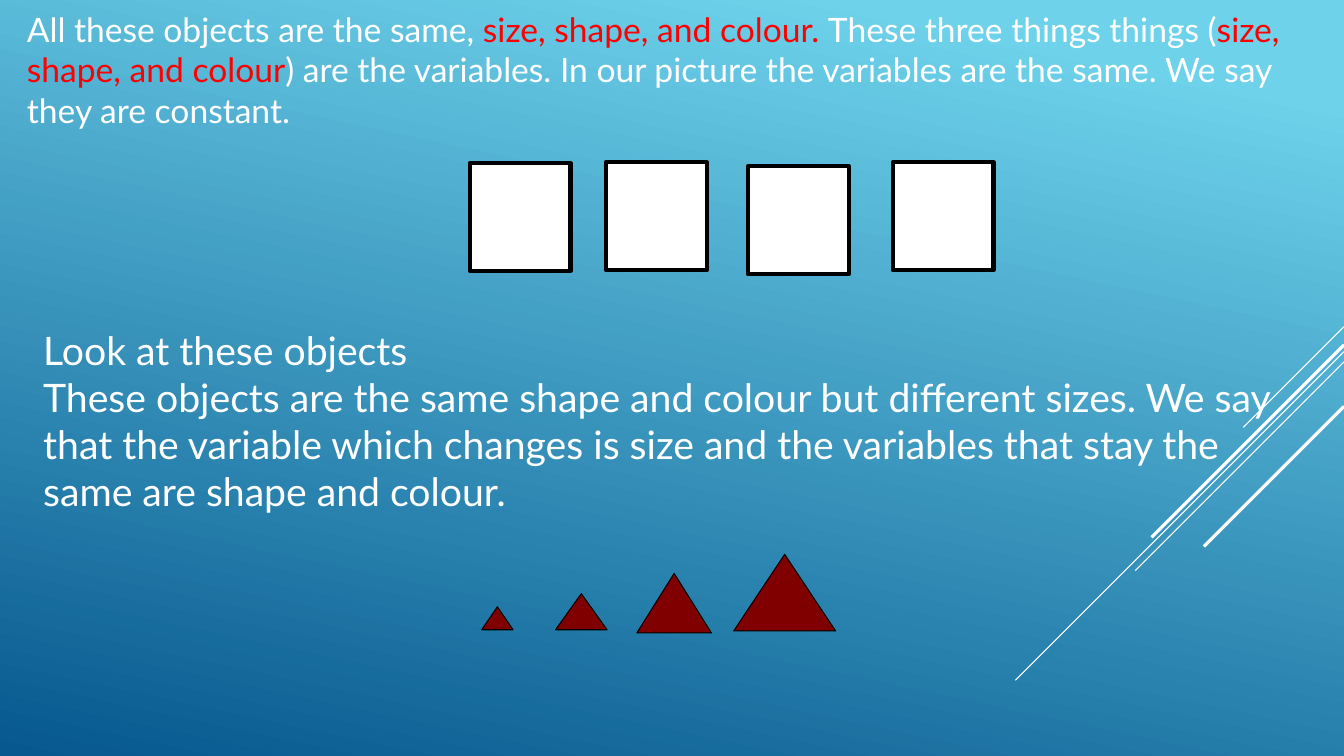
from dataclasses import dataclass

from lxml.etree import SubElement
from pptx import Presentation
from pptx.dml.color import RGBColor
from pptx.enum.shapes import MSO_CONNECTOR as Connector, MSO_SHAPE as Shape
from pptx.enum.text import MSO_ANCHOR as Anchor
from pptx.oxml.ns import qn
from pptx.util import Cm, Pt


@dataclass(frozen=True)
class Theme:
    font: str = "Lato"
    white: str = "FFFFFF"
    black: str = "000000"
    highlight: str = "FF0000"
    maroon: str = "800000"
    sky: str = "6ED2EB"
    deep_blue: str = "06588E"
    intro_size: int = 24
    body_size: int = 28
    thin: float = 0.75
    medium: float = 2.25
    thick: float = 3


THEME = Theme()
PAGE_WIDTH, PAGE_HEIGHT = 33.87, 19.05


def color(value):
    return RGBColor.from_string(value)


def paint_background(page):
    fill = page.background.fill
    fill.gradient()
    fill.gradient_angle = 258  # counter-clockwise
    stops = ((0.1, THEME.sky), (1, THEME.deep_blue))
    for stop, (position, value) in zip(fill.gradient_stops, stops):
        stop.position = position
        stop.color.rgb = color(value)


def add_diagonal(page, top, run, weight):
    """Draw a 45 degree line down and left from the right edge."""
    line = page.shapes.add_connector(
        Connector.STRAIGHT, Cm(PAGE_WIDTH), Cm(top),
        Cm(PAGE_WIDTH - run), Cm(top + run))
    line.line.color.rgb = color(THEME.white)
    line.line.width = Pt(weight)
    SubElement(line._element.spPr, qn("a:effectLst"))


def add_figure(page, kind, left, top, width, height, *, fill, weight):
    figure = page.shapes.add_shape(kind, Cm(left), Cm(top), Cm(width), Cm(height))
    figure.shadow.inherit = False
    figure.fill.solid()
    figure.fill.fore_color.rgb = color(fill)
    figure.line.color.rgb = color(THEME.black)
    figure.line.width = Pt(weight)


def add_text(page, paragraphs, *, left, top, width, height, size):
    """Each paragraph is a list of (text, colour) spans."""
    box = page.shapes.add_textbox(Cm(left), Cm(top), Cm(width), Cm(height))
    frame = box.text_frame
    frame.word_wrap = True
    frame.vertical_anchor = Anchor.TOP
    for index, spans in enumerate(paragraphs):
        para = frame.add_paragraph() if index else frame.paragraphs[0]
        for text, value in spans:
            span = para.add_run()
            span.text = text
            span.font.name = THEME.font
            span.font.size = Pt(size)
            span.font.color.rgb = color(value)


def main():
    deck = Presentation()
    deck.slide_width, deck.slide_height = Cm(PAGE_WIDTH), Cm(PAGE_HEIGHT)
    page = deck.slides.add_slide(deck.slide_layouts[6])
    paint_background(page)

    # Diagonal lines at the right edge
    for top, run, weight in (
        (8.23, 2.54, THEME.thin), (8.86, 8.28, THEME.thin),
        (9.12, 5.26, THEME.thin), (8.69, 4.85, THEME.medium),
        (10.24, 3.53, THEME.medium),
    ):
        add_diagonal(page, top, run, weight)

    # Constant variables: four equal squares
    add_text(page, [[
        ("All these objects are the same, ", THEME.white),
        ("size, shape, and colour. ", THEME.highlight),
        ("These three things things (", THEME.white),
        ("size, shape, and colour", THEME.highlight),
        (") are the variables. In our picture the variables are the same. "
         "We say they are constant.", THEME.white),
    ]], left=0.43, top=0.1, width=32.51, height=4.11, size=THEME.intro_size)
    for left, top in ((11.84, 4.11), (15.27, 4.09), (18.85, 4.19), (22.5, 4.09)):
        add_figure(page, Shape.RECTANGLE, left, top, 2.54, 2.72,
                   fill=THEME.white, weight=THEME.thick)

    # Changing variable: triangles of growing size
    add_text(page, [
        [("Look at these objects", THEME.white)],
        [("These objects are the same shape and colour but different sizes. "
          "We say that the variable which changes is size and the variables "
          "that stay the same are shape and colour.", THEME.white)],
    ], left=0.84, top=8.1, width=31.95, height=5.05, size=THEME.body_size)
    for left, top, width, height in (
        (12.14, 15.29, 0.79, 0.58), (14, 14.96, 1.3, 0.91),
        (16.05, 14.45, 1.88, 1.5), (18.49, 13.97, 2.57, 1.93),
    ):
        add_figure(page, Shape.ISOSCELES_TRIANGLE, left, top, width, height,
                   fill=THEME.maroon, weight=THEME.thin)

    deck.save("out.pptx")


if __name__ == "__main__":
    main()
